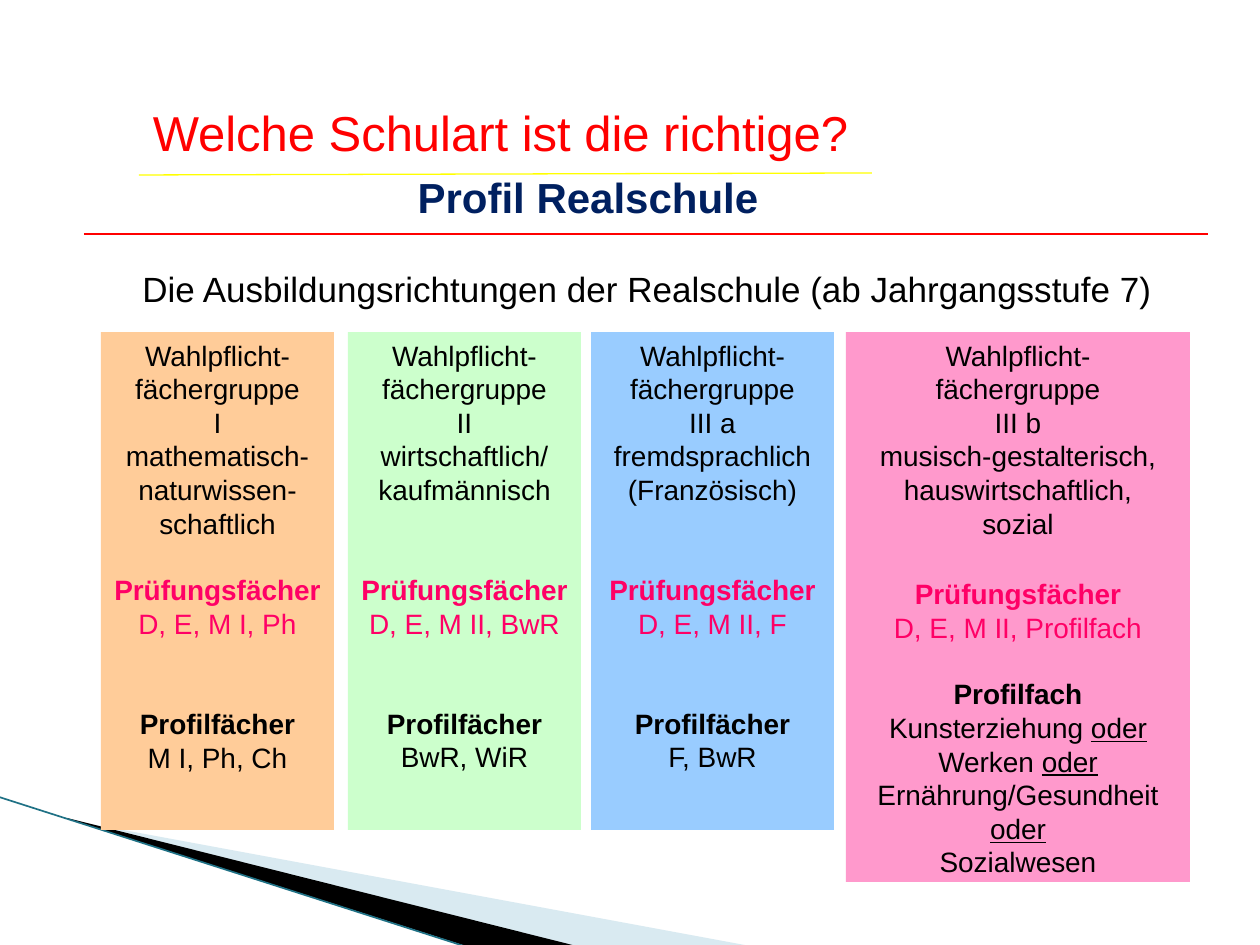
from lxml import etree
from pptx import Presentation
from pptx.dml.color import RGBColor
from pptx.enum.shapes import MSO_CONNECTOR, MSO_SHAPE
from pptx.enum.text import MSO_ANCHOR, PP_ALIGN
from pptx.oxml.ns import qn
from pptx.util import Emu, Pt

CENTER, LEFT = PP_ALIGN.CENTER, PP_ALIGN.LEFT
MIDDLE, TOP = MSO_ANCHOR.MIDDLE, MSO_ANCHOR.TOP
STRAIGHT, RECTANGLE = MSO_CONNECTOR.STRAIGHT, MSO_SHAPE.RECTANGLE

PIXELS_PER_INCH = 126
FONT = "Arial"
BLACK, PINK = "000000", "FF0066"
BLANK_LINE = 19  # points

TITLE = "Welche Schulart ist die richtige?"
SUBTITLE = "Profil Realschule"
INTRO = "Die Ausbildungsrichtungen der Realschule (ab Jahrgangsstufe 7)"

# Groups of lines; the first line of the second and third group is a bold heading.
# Words between underscores are underlined.
COLUMNS = [
    dict(left=101, width=233, height=498, fill="FFCC99", gaps=(1, 2), groups=[
        ["Wahlpflicht-fächergruppe", "I", "mathematisch-naturwissen-schaftlich"],
        ["Prüfungsfächer", "D, E, M I, Ph"],
        ["Profilfächer", "M I, Ph, Ch"]]),
    dict(left=348, width=233, height=498, fill="CCFFCC", gaps=(2, 2), groups=[
        ["Wahlpflicht-", "fächergruppe", "II", "wirtschaftlich/\vkaufmännisch"],
        ["Prüfungsfächer", "D, E, M II, BwR"],
        ["Profilfächer", "BwR, WiR"]]),
    dict(left=591, width=243, height=498, fill="99CCFF", gaps=(2, 2), groups=[
        ["Wahlpflicht-", "fächergruppe", "III a", "fremdsprachlich (Französisch)"],
        ["Prüfungsfächer", "D, E, M II, F"],
        ["Profilfächer", "F, BwR"]]),
    dict(left=846, width=344, height=550, fill="FF99CC", gaps=(1.12, 1), groups=[
        ["Wahlpflicht-", "fächergruppe", "III b", "musisch-gestalterisch,",
         "hauswirtschaftlich,", "sozial"],
        ["Prüfungsfächer", "D, E, M II, Profilfach"],
        ["Profilfach", "Kunsterziehung _oder_ Werken _oder_",
         "Ernährung/Gesundheit", "_oder_", "Sozialwesen"]]),
]
COLUMN_TOP = 332
GROUP_COLORS = [BLACK, PINK, BLACK]

# Corner points, fill, opacity in percent
WEDGES = [
    ([(69, 820), (750, 946), (575, 946), (69, 819)], "A0CBDC", 40),
    ([(67, 818), (576, 946), (469, 947), (68, 819)], BLACK, 100),
]
# Start, end, colour, width in points
LINES = [
    ((-1, 797), (467, 947), "1F7185", 0.95),
    ((139, 175), (872, 173), "FFFF00", 0.75),
    ((84, 234), (1208, 234), "FF0000", 0.75),
]


def px(value):
    return Emu(round(value * 914400 / PIXELS_PER_INCH))


def rgb(color):
    return RGBColor.from_string(color)


def format_runs(paragraph, size, color, bold=False, align=CENTER):
    paragraph.alignment = align
    for run in paragraph.runs:
        run.font.name = FONT
        run.font.size = Pt(size)
        run.font.bold = bold
        run.font.color.rgb = rgb(color)


def fill_plain(shape, color):
    shape.shadow.inherit = False
    shape.fill.solid()
    shape.fill.fore_color.rgb = rgb(color)
    shape.line.fill.background()


def add_wedge(slide, points, color, opacity):
    builder = slide.shapes.build_freeform(*points[0], scale=px(1))
    builder.add_line_segments(points[1:], close=True)
    wedge = builder.convert_to_shape()
    fill_plain(wedge, color)
    if opacity < 100:
        color_element = wedge.fill._xPr.find(qn("a:solidFill"))[0]
        etree.SubElement(color_element, qn("a:alpha"), val=str(opacity * 1000))


def add_line(slide, start, end, color, width):
    line = slide.shapes.add_connector(STRAIGHT, *map(px, start + end))
    line.line.color.rgb = rgb(color)
    line.line.width = Pt(width)
    etree.SubElement(line._element.spPr, qn("a:effectLst"))


def set_single_line(shape, text, size, color, bold=False, align=CENTER):
    frame = shape.text_frame
    frame.text = text
    frame.word_wrap = True
    frame.vertical_anchor = MIDDLE
    format_runs(frame.paragraphs[0], size, color, bold, align)


def write_line(paragraph, text):
    pieces = text.split("_")
    paragraph.text = pieces[0]
    for index, piece in enumerate(pieces[1:], 1):
        if piece:
            run = paragraph.add_run()
            run.text = piece
            run.font.underline = index % 2 == 1


def add_column(slide, left, width, height, fill, gaps, groups):
    box = slide.shapes.add_shape(
        RECTANGLE, px(left), px(COLUMN_TOP), px(width), px(height))
    fill_plain(box, fill)
    frame = box.text_frame
    frame.word_wrap = True
    frame.vertical_anchor = TOP
    frame.margin_left = frame.margin_right = px(11)
    paragraph = frame.paragraphs[0]
    for group_index, lines in enumerate(groups):
        for line_index, text in enumerate(lines):
            if group_index or line_index:
                paragraph = frame.add_paragraph()
            is_heading = group_index > 0 and line_index == 0
            if is_heading:
                paragraph.space_before = Pt(round(BLANK_LINE * gaps[group_index - 1]))
            write_line(paragraph, text)
            format_runs(paragraph, 16, GROUP_COLORS[group_index], is_heading)


def main():
    presentation = Presentation()
    presentation.slide_width, presentation.slide_height = px(1260), px(945)
    slide = presentation.slides.add_slide(presentation.slide_layouts[5])

    for wedge in WEDGES:
        add_wedge(slide, *wedge)
    for line in LINES:
        add_line(slide, *line)

    title = slide.shapes.title
    title.left, title.top, title.width, title.height = map(px, (84, 96, 833, 72))
    set_single_line(title, TITLE, 28, "FF0000")

    subtitle = slide.shapes.add_textbox(*map(px, (219, 165, 738, 64)))
    set_single_line(subtitle, SUBTITLE, 24, "002060", bold=True)

    for column in COLUMNS:
        add_column(slide, **column)

    intro = slide.shapes.add_textbox(*map(px, (130, 253, 1053, 72)))
    set_single_line(intro, INTRO, 20, BLACK, align=LEFT)

    presentation.save("out.pptx")


if __name__ == "__main__":
    main()
